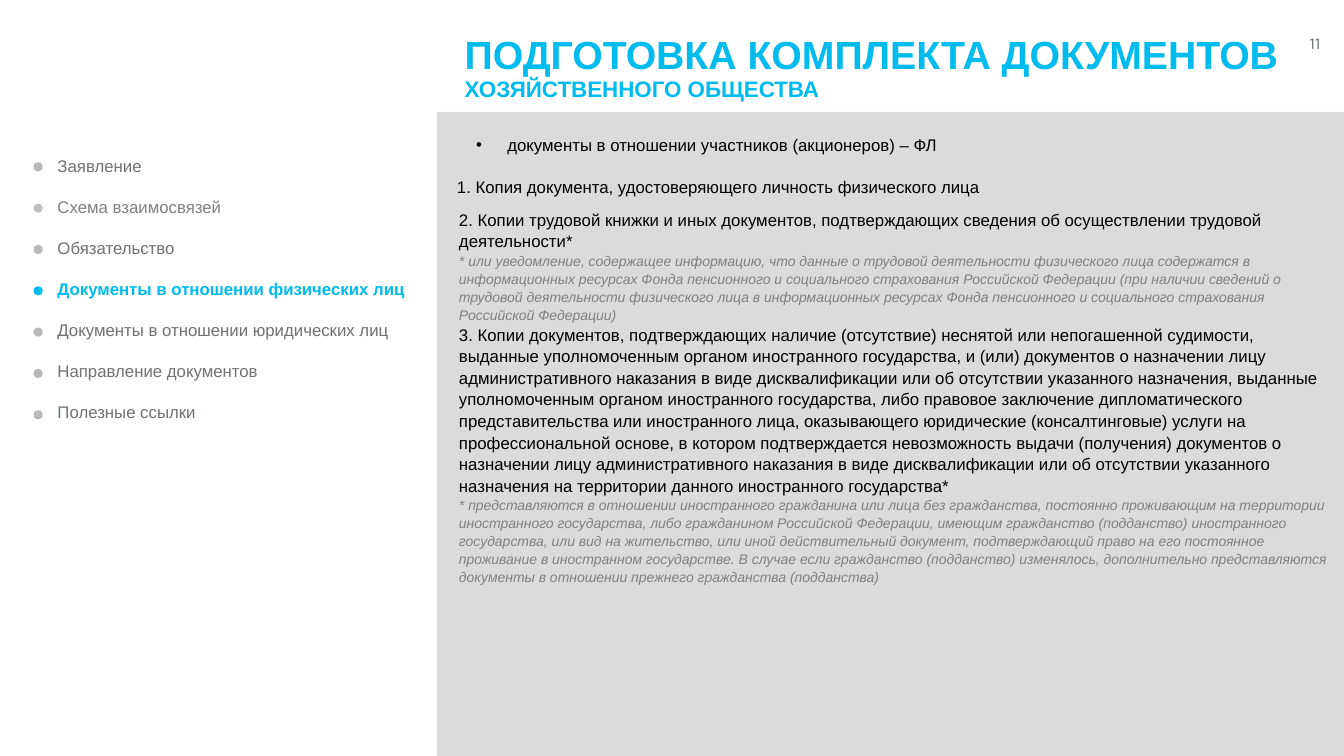
from lxml.etree import SubElement
from pptx import Presentation
from pptx.dml.color import RGBColor
from pptx.enum.shapes import MSO_SHAPE as Preset
from pptx.enum.text import MSO_ANCHOR as Anchor, MSO_AUTO_SIZE as AutoSize, PP_ALIGN as Align
from pptx.oxml.ns import qn
from pptx.util import Inches, Pt

SLIDE_W, SLIDE_H = Inches(13.33), Inches(7.5)
COLUMN, ROW = SLIDE_W / 40, SLIDE_H / 30

ACCENT = RGBColor(0x00, 0xBB, 0xEE)
PANEL = RGBColor(0xDB, 0xDB, 0xDC)
DOT = RGBColor(0xB7, 0xB8, 0xB9)
DOT_LIGHT = RGBColor(0xBF, 0xBF, 0xBF)
MENU = RGBColor(0x6F, 0x71, 0x71)
MENU_WARM = RGBColor(0x76, 0x71, 0x71)
NOTE = RGBColor(0x80, 0x80, 0x80)
NUMBER = RGBColor(0x74, 0x77, 0x7B)
BLACK = RGBColor(0, 0, 0)

SECTIONS = [
    ("Заявление", MENU, DOT),
    ("Схема взаимосвязей", NOTE, DOT_LIGHT),
    ("Обязательство", MENU, DOT),
    ("Документы в отношении физических лиц", ACCENT, ACCENT),
    ("Документы в отношении юридических лиц", MENU, DOT),
    ("Направление документов", MENU_WARM, DOT),
    ("Полезные ссылки", MENU, DOT),
]

REQUIREMENTS = [
    "1. Копия документа, удостоверяющего личность физического лица",
    "2. Копии трудовой книжки и иных документов, подтверждающих сведения об осуществлении "
    "трудовой деятельности*",
    "* или уведомление, содержащее информацию, что данные о трудовой деятельности физического "
    "лица содержатся в информационных ресурсах Фонда пенсионного и социального страхования "
    "Российской Федерации (при наличии сведений о трудовой деятельности физического лица в "
    "информационных ресурсах Фонда пенсионного и социального страхования Российской Федерации)",
    "3. Копии документов, подтверждающих наличие (отсутствие) неснятой или непогашенной "
    "судимости, выданные уполномоченным органом иностранного государства, и (или) документов о "
    "назначении лицу административного наказания в виде дисквалификации или об отсутствии "
    "указанного назначения, выданные уполномоченным органом иностранного государства, либо "
    "правовое заключение дипломатического представительства или иностранного лица, оказывающего "
    "юридические (консалтинговые) услуги на профессиональной основе, в котором подтверждается "
    "невозможность выдачи (получения) документов о назначении лицу административного наказания "
    "в виде дисквалификации или об отсутствии указанного назначения на территории данного "
    "иностранного государства*",
    "* представляются в отношении иностранного гражданина или лица без гражданства, постоянно "
    "проживающим на территории иностранного государства, либо гражданином Российской Федерации, "
    "имеющим гражданство (подданство) иностранного государства, или вид на жительство, или иной "
    "действительный документ, подтверждающий право на его постоянное проживание в иностранном "
    "государстве. В случае если гражданство (подданство) изменялось, дополнительно "
    "представляются документы в отношении прежнего гражданства (подданства)",
]


def grid(column, row, columns, rows):
    """Turn grid units into left, top, width and height."""
    return int(column * COLUMN), int(row * ROW), int(columns * COLUMN), int(rows * ROW)


def move(holder, *cells):
    """Place a placeholder on the grid and return its text frame."""
    holder.left, holder.top, holder.width, holder.height = grid(*cells)
    frame = holder.text_frame
    frame.word_wrap, frame.auto_size = True, AutoSize.NONE
    return frame


def text_box(slide, *cells):
    """Add a wrapping text box and return its text frame."""
    frame = slide.shapes.add_textbox(*grid(*cells)).text_frame
    frame.word_wrap = True
    return frame


def solid(slide, preset, color, *cells):
    """Add a plain filled shape without outline."""
    shape = slide.shapes.add_shape(preset, *grid(*cells))
    shape.shadow.inherit = False
    shape.fill.solid()
    shape.fill.fore_color.rgb = color
    shape.line.fill.background()
    return shape


def indent(paragraph, margin=0, hanging=0, bullet=None):
    """Set the margin, first-line indent and bullet of a paragraph."""
    properties = paragraph._p.get_or_add_pPr()
    properties.set("marL", str(Inches(margin)))
    properties.set("indent", str(Inches(hanging)))
    if bullet:
        SubElement(properties, qn("a:buFont"), typeface="Arial")
        SubElement(properties, qn("a:buChar"), char=bullet)
    else:
        SubElement(properties, qn("a:buNone"))


def style(paragraph, size, color, name="Arial", bold=False, italic=False):
    """Set the font of a whole paragraph."""
    font = paragraph.font
    font.name, font.size, font.bold, font.italic = name, Pt(size), bold, italic
    font.color.rgb = color


def fill_paragraphs(frame, texts):
    """Write one paragraph per text and return the paragraphs."""
    frame.text = "\n".join(texts)
    for paragraph in frame.paragraphs:
        paragraph.space_before = Pt(0)
    return frame.paragraphs


def add_title(slide):
    """Write the two-line heading."""
    frame = move(slide.shapes.title, 13.53, -0.16, 26.4, 5.8)
    frame.vertical_anchor = Anchor.MIDDLE
    heading = frame.paragraphs[0]
    heading.alignment, heading.line_spacing = Align.LEFT, 0.9
    style(heading, 28, ACCENT, bold=True)
    heading.add_run().text = "ПОДГОТОВКА КОМПЛЕКТА ДОКУМЕНТОВ"
    heading.add_line_break()
    subject = heading.add_run()
    subject.text = "ХОЗЯЙСТВЕННОГО ОБЩЕСТВА"
    subject.font.size = Pt(16)


def add_menu(slide, holder):
    """List the sections with a dot beside each."""
    frame = move(holder, 1.41, 5.96, 11.07, 11.12)
    entries = fill_paragraphs(frame, [label for label, _, _ in SECTIONS])
    for index, (entry, (_, color, dot)) in enumerate(zip(entries, SECTIONS)):
        indent(entry)
        entry.space_after = Pt(15)
        style(entry, 12, color, bold=color == ACCENT)
        solid(slide, Preset.OVAL, dot, 1, 6.44 + 1.64 * index, 0.27, 0.36)


def add_requirements(holder):
    """List the required documents with their footnotes."""
    frame = move(holder, 13, 6.76, 27, 17.04)
    for index, item in enumerate(fill_paragraphs(frame, REQUIREMENTS)):
        footnote = item.text.startswith("*")
        indent(item, 0.12 if index else 0.1)
        item.line_spacing = 1.07
        item.space_after = Pt(0 if index else 8)
        style(item, 10 if footnote else 12, NOTE if footnote else BLACK, italic=footnote)


def add_topic(slide):
    """Add the bulleted line above the requirements."""
    frame = text_box(slide, 13, 5.44, 27, 5.92)
    frame.margin_left = frame.margin_top = frame.margin_right = frame.margin_bottom = 0
    topic = frame.paragraphs[0]
    topic.text = "документы в отношении участников (акционеров) – ФЛ"
    topic.line_spacing = 0.9
    indent(topic, 0.7, -0.31, "•")
    style(topic, 12, BLACK)


def add_number(slide):
    """Add the page number in the corner."""
    number = text_box(slide, 32.34, 1.12, 7.26, 1.2).paragraphs[0]
    number.text, number.alignment = "11", Align.RIGHT
    style(number, 12, NUMBER, name="Karla")


def main():
    """Build the slide and save it."""
    deck = Presentation()
    deck.slide_width, deck.slide_height = SLIDE_W, SLIDE_H
    slide = deck.slides.add_slide(deck.slide_layouts.get_by_name("Two Content"))
    panel = solid(slide, Preset.RECTANGLE, PANEL, 13, 4.44, 27, 25.56)
    slide.shapes._spTree.insert(2, panel._element)
    add_title(slide)
    add_menu(slide, slide.placeholders[1])
    add_requirements(slide.placeholders[2])
    add_topic(slide)
    add_number(slide)
    deck.save("out.pptx")


if __name__ == "__main__":
    main()
